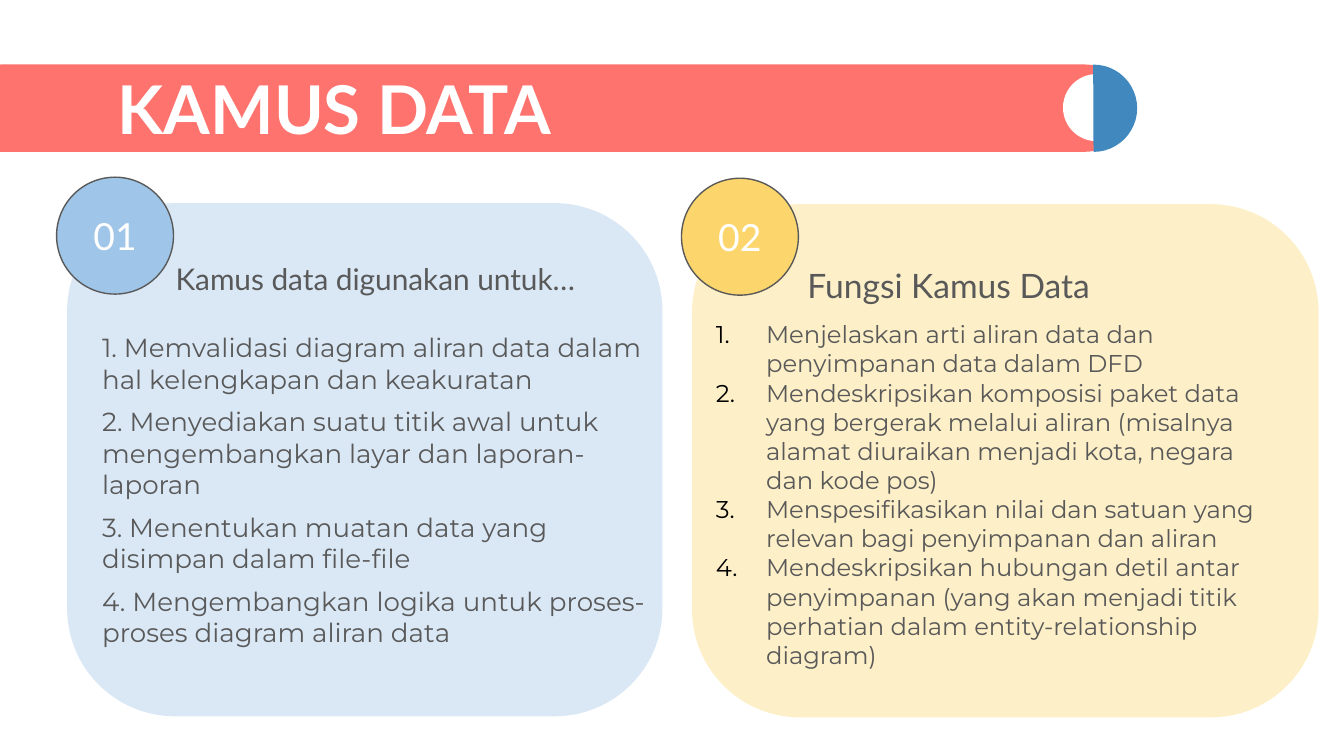
"""Build the KAMUS DATA slide with a title banner and two numbered cards."""
from lxml import etree
from pptx import Presentation
from pptx.dml.color import RGBColor
from pptx.enum.shapes import MSO_SHAPE
from pptx.enum.text import MSO_ANCHOR, PP_ALIGN
from pptx.oxml.ns import qn
from pptx.util import Cm, Pt

ROUNDED = MSO_SHAPE.ROUNDED_RECTANGLE
OVAL = MSO_SHAPE.OVAL
PIE = MSO_SHAPE.PIE
MIDDLE = MSO_ANCHOR.MIDDLE
TOP = MSO_ANCHOR.TOP
CENTER = PP_ALIGN.CENTER

WHITE = RGBColor(0xFF, 0xFF, 0xFF)
BLACK = RGBColor(0x00, 0x00, 0x00)
CORAL = RGBColor(0xFF, 0x73, 0x6E)
OCEAN = RGBColor(0x40, 0x88, 0xBE)
SKY = RGBColor(0x9F, 0xC5, 0xE8)
YELLOW = RGBColor(0xFC, 0xD6, 0x6C)
GREY = RGBColor(0x59, 0x59, 0x59)

HEADING_FONT = "Lato"
BODY_FONT = "Montserrat"
INSET = Cm(0.25)
HANGING = Cm(0.95)
CARD_HEIGHT = 9.7
BADGE_SIZE = 2.21

USES = [
    "1. Memvalidasi diagram aliran data dalam hal kelengkapan dan keakuratan",
    "2. Menyediakan suatu titik awal untuk mengembangkan layar dan laporan-laporan",
    "3. Menentukan muatan data yang disimpan dalam file-file",
    "4. Mengembangkan logika untuk proses-proses diagram aliran data",
]
FUNCTIONS = [
    "Menjelaskan arti aliran data dan penyimpanan data dalam DFD",
    "Mendeskripsikan komposisi paket data yang bergerak melalui aliran "
    "(misalnya alamat diuraikan menjadi kota, negara dan kode pos)",
    "Menspesifikasikan nilai dan satuan yang relevan bagi penyimpanan dan aliran",
    "Mendeskripsikan hubungan detil antar penyimpanan (yang akan menjadi titik "
    "perhatian dalam entity-relationship diagram)",
]


def add_filled(slide, preset, box, color, adjustments=()):
    """Add a borderless preset shape; box is left, top, width, height in cm."""
    shape = slide.shapes.add_shape(preset, *map(Cm, box))
    shape.shadow.inherit = False
    shape.fill.solid()
    shape.fill.fore_color.rgb = color
    shape.line.fill.background()
    for index, value in enumerate(adjustments):
        shape.adjustments[index] = value
    return shape


def set_opacity(shape, percent):
    """Make the solid fill of a shape partly transparent."""
    color = shape._element.spPr.find(qn("a:solidFill"))[0]
    etree.SubElement(color, qn("a:alpha"), val=str(percent * 1000))


def set_frame(frame, anchor):
    """Set wrapping, insets and vertical anchor of a text frame."""
    frame.word_wrap = True
    frame.vertical_anchor = anchor
    frame.margin_left = frame.margin_right = INSET
    frame.margin_top = frame.margin_bottom = INSET


def add_run(paragraph, text, font, size, color, bold=False):
    """Append one formatted run to a paragraph."""
    run = paragraph.add_run()
    run.text = text
    run.font.name = font
    run.font.size = Pt(size)
    run.font.color.rgb = color
    run.font.bold = bold


def add_text(slide, box, lines, font, size, color, bold=False, anchor=TOP):
    """Add a text box with one paragraph per line and return its paragraphs."""
    frame = slide.shapes.add_textbox(*map(Cm, box)).text_frame
    set_frame(frame, anchor)
    for index, line in enumerate(lines):
        paragraph = frame.add_paragraph() if index else frame.paragraphs[0]
        add_run(paragraph, line, font, size, color, bold)
    return frame.paragraphs


def number_paragraph(paragraph):
    """Give a paragraph an automatic black number with a hanging indent."""
    properties = paragraph._p.get_or_add_pPr()
    properties.set("marL", str(HANGING))
    properties.set("indent", str(-HANGING))
    bullet_color = etree.SubElement(properties, qn("a:buClr"))
    etree.SubElement(bullet_color, qn("a:srgbClr"), val=str(BLACK))
    etree.SubElement(properties, qn("a:buFont"), typeface=BODY_FONT)
    etree.SubElement(properties, qn("a:buAutoNum"), type="arabicPeriod")


def add_banner(slide, title):
    """Add the coral title bar with its half-round end."""
    add_filled(slide, ROUNDED, (-0.81, 1.22, 22.15, 1.65), CORAL, [0.5])
    add_filled(slide, OVAL, (20.09, 1.4, 1.27, 1.27), WHITE)
    cap = add_filled(slide, PIE, (19.84, 1.22, 1.65, 1.65), OCEAN, [53.67, 162])
    cap.rotation = 180
    add_text(slide, (1.98, 1.52, 17.7, 1.04), [title], HEADING_FONT, 36,
             WHITE, bold=True, anchor=MIDDLE)


def add_card(slide, left, top, width, color):
    """Add the translucent rounded panel of a card."""
    panel = add_filled(slide, ROUNDED, (left, top, width, CARD_HEIGHT), color, [0.21])
    set_opacity(panel, 38)


def add_badge(slide, card_left, card_top, number, color):
    """Add the numbered circle overlapping the corner of a card."""
    box = (card_left - 0.2, card_top - 0.49, BADGE_SIZE, BADGE_SIZE)
    badge = add_filled(slide, OVAL, box, color)
    badge.line.color.rgb = GREY
    badge.line.width = Pt(0.75)
    set_frame(badge.text_frame, MIDDLE)
    paragraph = badge.text_frame.paragraphs[0]
    paragraph.alignment = CENTER
    add_run(paragraph, number, HEADING_FONT, 20, WHITE)


def main():
    """Assemble and save the slide."""
    deck = Presentation()
    deck.slide_width, deck.slide_height = Cm(25.4), Cm(14.29)
    slide = deck.slides.add_slide(deck.slide_layouts[6])
    add_banner(slide, "KAMUS DATA")

    add_card(slide, 1.27, 3.84, 11.25, SKY)
    add_text(slide, (3.07, 4.67, 9.98, 1.22), ["Kamus data digunakan untuk…"],
             HEADING_FONT, 16, GREY)
    for use in add_text(slide, (1.68, 6.02, 10.97, 2.26), USES, BODY_FONT, 14, GREY):
        use.space_after = Pt(6)
    add_badge(slide, 1.27, 3.84, "01", SKY)

    add_card(slide, 13.08, 3.86, 11.84, YELLOW)
    add_text(slide, (15.01, 4.75, 9.12, 1.22), ["Fungsi Kamus Data"],
             HEADING_FONT, 18, GREY)
    for function in add_text(slide, (13.28, 5.79, 11.28, 2.26), FUNCTIONS,
                             BODY_FONT, 13, GREY):
        number_paragraph(function)
    add_badge(slide, 13.08, 3.86, "02", YELLOW)

    deck.save("out.pptx")


if __name__ == "__main__":
    main()
